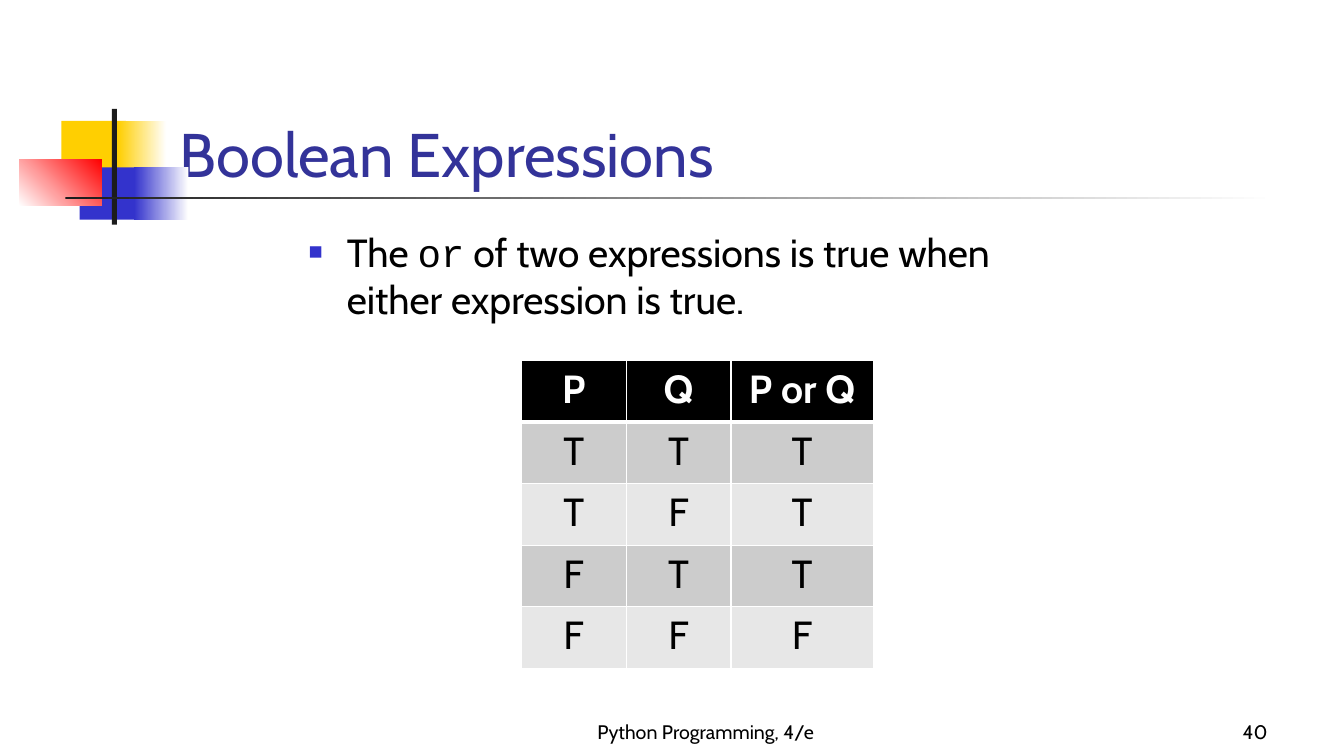
"""Build the slide on the truth table of the Boolean operator or."""
import lxml.etree
import pptx
import pptx.dml.color
import pptx.enum.shapes
import pptx.enum.text
import pptx.oxml.ns
import pptx.util

WIDTH, HEIGHT = 13.33, 7.5
FONT, CODE_FONT = "Cabin", "Courier New"
YELLOW, BLUE, RED, DARK, WHITE, BLACK = "FFCF01", "3333CC", "FF0000", "1C1C1C", "FFFFFF", "000000"
ALIGN = pptx.enum.text.PP_ALIGN
ANCHOR = pptx.enum.text.MSO_ANCHOR

TITLE = "Boolean Expressions"
STATEMENT = [
    ("The ", FONT),
    ("or", CODE_FONT),
    (" of two expressions is true when either expression is true.", FONT),
]
TRUTH_TABLE = ["P", "Q", "P or Q"], list("TTT"), list("TFT"), list("FTT"), list("FFF")
COLUMN_WIDTHS = 1.04, 1.04, 1.41
ROW_HEIGHT = 0.61
BAND_FILLS = "E7E7E7", "CCCCCC"
DECORATION = [
    ((0.61, 1.2, 0.64, 0.52), [YELLOW], 0),
    ((1.17, 1.2, 0.48, 0.52), [YELLOW, WHITE], 0),
    ((0.79, 1.66, 0.62, 0.52), [BLUE], 0),
    ((1.33, 1.66, 0.54, 0.52), [BLUE, WHITE], 0),
    ((0.19, 1.58, 0.82, 0.46), [WHITE, RED], 45),
    ((1.11, 1.08, 0.05, 1.15), [DARK], 0),
    ((0.65, 1.95, 12, 0.03), [DARK, WHITE], 0),
]
FOOTERS = [
    ("Python Programming, 4/e", (4.89, 6.92, 4.22, 0.5), ALIGN.CENTER),
    ("40", (9.89, 6.92, 2.78, 0.5), ALIGN.RIGHT),
]


def color(value):
    return pptx.dml.color.RGBColor.from_string(value)


def inches(values):
    return [pptx.util.Inches(value) for value in values]


def place(shape, box):
    shape.left, shape.top, shape.width, shape.height = inches(box)


def add_run(paragraph, text, size, value=BLACK, font=FONT, bold=False):
    run = paragraph.add_run()
    run.text = text
    run.font.name, run.font.size, run.font.bold = font, pptx.util.Pt(size), bold
    run.font.color.rgb = color(value)


def add_element(parent, tag, **attributes):
    return lxml.etree.SubElement(parent, pptx.oxml.ns.qn(tag), attributes)


def add_decoration(slide):
    for box, colors, angle in DECORATION:
        shape = slide.shapes.add_shape(pptx.enum.shapes.MSO_SHAPE.RECTANGLE, *inches(box))
        shape.shadow.inherit = False
        shape.line.fill.background()
        if len(colors) == 1:
            shape.fill.solid()
            shape.fill.fore_color.rgb = color(colors[0])
        else:
            shape.fill.gradient()
            shape.fill.gradient_angle = angle
            for stop, value in zip(shape.fill.gradient_stops, colors):
                stop.color.rgb = color(value)


def add_footers(slide):
    for text, box, alignment in FOOTERS:
        frame = slide.shapes.add_textbox(*inches(box)).text_frame
        frame.word_wrap = True
        frame.vertical_anchor = ANCHOR.BOTTOM
        frame.paragraphs[0].alignment = alignment
        add_run(frame.paragraphs[0], text, 14)


def fill_title(title):
    place(title, (1.68, 0.68, 11.36, 1.25))
    frame = title.text_frame
    frame.auto_size = pptx.enum.text.MSO_AUTO_SIZE.NONE
    frame.vertical_anchor = ANCHOR.BOTTOM
    frame.paragraphs[0].alignment = ALIGN.LEFT
    add_run(frame.paragraphs[0], TITLE, 44, "333399")


def fill_body(body):
    place(body, (2.96, 2.21, 7.87, 4.5))
    body.text_frame.auto_size = pptx.enum.text.MSO_AUTO_SIZE.NONE
    paragraph = body.text_frame.paragraphs[0]
    paragraph.space_before = pptx.util.Pt(5.6)
    for text, font in STATEMENT:
        add_run(paragraph, text, 28, font=font)
    properties = paragraph._p.get_or_add_pPr()
    indent = pptx.util.Inches(0.38)
    properties.set("marL", str(indent))
    properties.set("indent", str(-indent))
    add_element(add_element(properties, "a:buClr"), "a:srgbClr", val=BLUE)
    add_element(properties, "a:buSzPct", val="60000")
    add_element(properties, "a:buFont", typeface="Arial")
    add_element(properties, "a:buChar", char="■")


def add_borders(cell, bottom_width):
    properties = cell._tc.get_or_add_tcPr()
    for side, width in (("L", 1), ("R", 1), ("T", 1), ("B", bottom_width)):
        line = add_element(properties, f"a:ln{side}", w=str(pptx.util.Pt(width)))
        add_element(add_element(line, "a:solidFill"), "a:srgbClr", val=WHITE)


def add_truth_table(slide):
    size = sum(COLUMN_WIDTHS), ROW_HEIGHT * len(TRUTH_TABLE)
    frame = slide.shapes.add_table(
        len(TRUTH_TABLE), len(COLUMN_WIDTHS), *inches((5.17, 3.58, *size)))
    table = frame.table
    for column, width in zip(table.columns, COLUMN_WIDTHS):
        column.width = pptx.util.Inches(width)
    for row_index, values in enumerate(TRUTH_TABLE):
        header = row_index == 0
        table.rows[row_index].height = pptx.util.Inches(ROW_HEIGHT)
        for column_index, value in enumerate(values):
            cell = table.cell(row_index, column_index)
            add_borders(cell, 3 if header else 1)
            cell.fill.solid()
            cell.fill.fore_color.rgb = color(BLACK if header else BAND_FILLS[row_index % 2])
            paragraph = cell.text_frame.paragraphs[0]
            paragraph.alignment = ALIGN.CENTER
            add_run(paragraph, value, 28, WHITE if header else BLACK, bold=header)


def main():
    presentation = pptx.Presentation()
    presentation.slide_width, presentation.slide_height = inches((WIDTH, HEIGHT))
    slide = presentation.slides.add_slide(presentation.slide_layouts[1])
    add_decoration(slide)
    add_footers(slide)
    fill_title(slide.shapes.title)
    fill_body(slide.placeholders[1])
    add_truth_table(slide)
    presentation.save("out.pptx")


if __name__ == "__main__":
    main()
